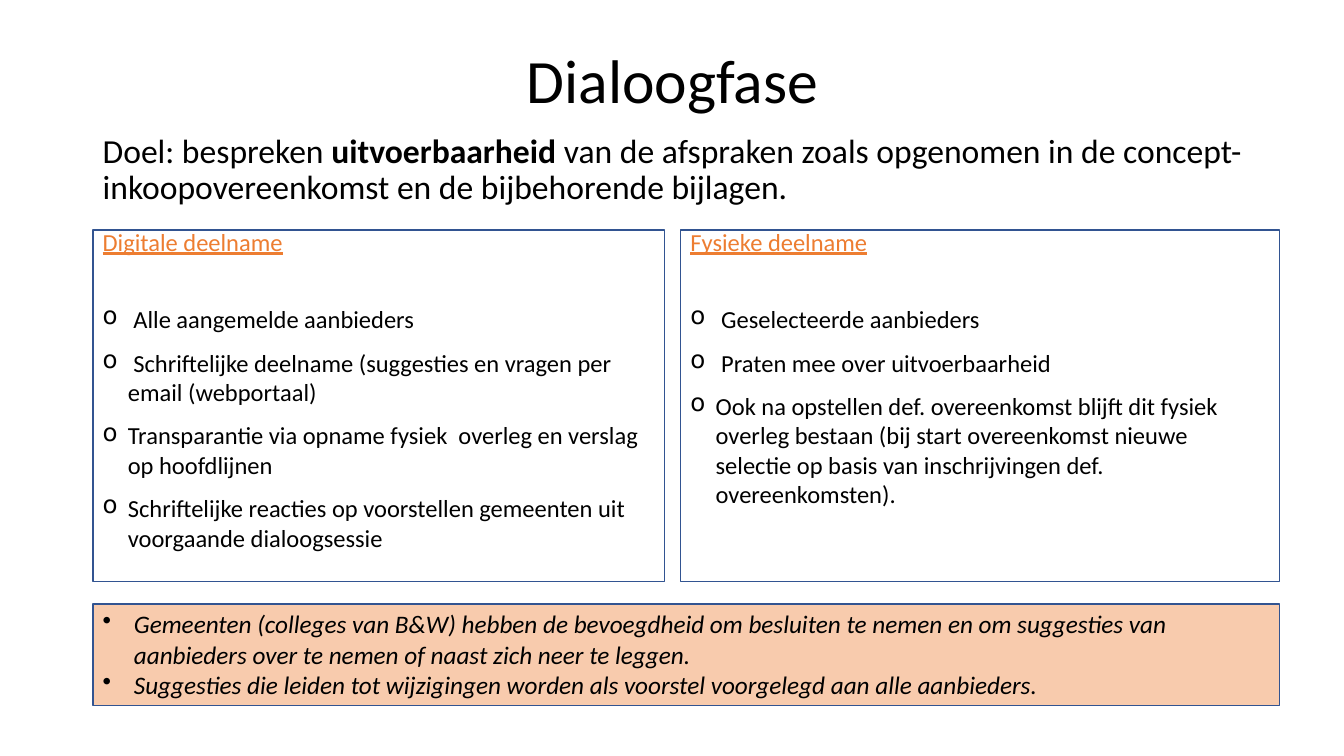
"""Build the slide on the dialogue phase."""
from lxml import etree
from pptx import Presentation
from pptx.dml.color import RGBColor
from pptx.enum.shapes import MSO_SHAPE
from pptx.enum.text import MSO_ANCHOR, PP_ALIGN
from pptx.oxml.ns import qn
from pptx.util import Inches, Pt

RECT = MSO_SHAPE.RECTANGLE
TOP, MIDDLE = MSO_ANCHOR.TOP, MSO_ANCHOR.MIDDLE
LEFT, CENTER = PP_ALIGN.LEFT, PP_ALIGN.CENTER

FONT = "Calibri"
COLORS = {"text": "000000", "heading": "ED7D31", "line": "325491", "note": "F8CBAD"}

TITLE = "Dialoogfase"
GOAL = [
    ("Doel: bespreken ", False),
    ("uitvoerbaarheid", True),
    (" van de afspraken zoals opgenomen in de concept-inkoopovereenkomst "
     "en de bijbehorende bijlagen.", False),
]
COLUMNS = [
    ("Digitale deelname", 5.67, [
        " Alle aangemelde aanbieders",
        " Schriftelijke deelname (suggesties en vragen per email (webportaal)",
        "Transparantie via opname fysiek  overleg en verslag op hoofdlijnen",
        "Schriftelijke reacties op voorstellen gemeenten uit voorgaande dialoogsessie",
    ]),
    ("Fysieke deelname", 5.94, [
        " Geselecteerde aanbieders",
        " Praten mee over uitvoerbaarheid",
        "Ook na opstellen def. overeenkomst blijft dit fysiek overleg bestaan "
        "(bij start overeenkomst nieuwe selectie op basis van inschrijvingen "
        "def. overeenkomsten).",
    ]),
]
NOTES = [
    "Gemeenten (colleges van B&W) hebben de bevoegdheid om besluiten te nemen en om "
    "suggesties van aanbieders over te nemen of naast zich neer te leggen.",
    "Suggesties die leiden tot wijzigingen worden als voorstel voorgelegd aan alle "
    "aanbieders.",
]

MARGIN, FULL_W, TEXT_W, GAP = 0.92, 11.77, 11.5, 0.16
HEADER_TOP, HEADER_H = 0.4, 0.86
COLUMN_TOP, COLUMN_H = 2.28, 3.49
NOTE_TOP, NOTE_H = 5.99, 1.01


def rgb(name):
    return RGBColor.from_string(COLORS[name])


def prepare(sp, anchor):
    tf = sp.text_frame
    tf.word_wrap = True
    tf.vertical_anchor = anchor
    return tf


def add_text(slide, top):
    box = slide.shapes.add_textbox(
        Inches(MARGIN), Inches(top), Inches(TEXT_W), Inches(HEADER_H))
    return prepare(box, MIDDLE)


def add_box(slide, left, top, width, height, fill=None, anchor=TOP):
    sp = slide.shapes.add_shape(
        RECT, Inches(left), Inches(top), Inches(width), Inches(height))
    sp.shadow.inherit = False
    if fill:
        sp.fill.solid()
        sp.fill.fore_color.rgb = rgb(fill)
    else:
        sp.fill.background()
    sp.line.color.rgb = rgb("line")
    sp.line.width = Pt(1.25)
    return prepare(sp, anchor)


def add_paragraph(tf, runs, size, color="text", align=LEFT, spacing=1.0, before=0):
    p = tf.paragraphs[0] if not tf.text else tf.add_paragraph()
    for text, bold in runs:
        r = p.add_run()
        r.text = text
        if bold:
            r.font.bold = True
    p.font.name, p.font.size = FONT, Pt(size)
    p.font.color.rgb = rgb(color)
    p.alignment, p.line_spacing, p.space_before = align, spacing, Pt(before)
    return p


def set_bullet(p, char, indent):
    pPr = p._p.get_or_add_pPr()
    pPr.set("marL", str(Inches(indent)))
    pPr.set("indent", str(-Inches(indent)))
    bullet = etree.Element(qn("a:buChar"), char=char)
    pPr.find(qn("a:defRPr")).addprevious(bullet)


def main():
    prs = Presentation()
    prs.slide_width, prs.slide_height = Inches(13.33), Inches(7.5)
    slide = prs.slides.add_slide(prs.slide_layouts[6])

    tf = add_text(slide, HEADER_TOP)
    add_paragraph(tf, [(TITLE, False)], 44, align=CENTER, spacing=0.9)
    tf = add_text(slide, HEADER_TOP + HEADER_H)
    add_paragraph(tf, GOAL, 24, spacing=0.9)

    left = MARGIN
    for heading, width, items in COLUMNS:
        tf = add_box(slide, left, COLUMN_TOP, width, COLUMN_H)
        p = add_paragraph(tf, [(heading, False)], 17.5, "heading", spacing=0.7)
        p.font.underline = True
        for i, item in enumerate(items):
            p = add_paragraph(tf, [(item, False)], 17.5, before=10 if i else 35)
            set_bullet(p, "o", 0.25)
        left += width + GAP

    tf = add_box(slide, MARGIN, NOTE_TOP, FULL_W, NOTE_H, "note")
    for note in NOTES:
        p = add_paragraph(tf, [(note, False)], 18)
        p.font.italic = True
        set_bullet(p, "•", 0.31)

    prs.save("out.pptx")


if __name__ == "__main__":
    main()
